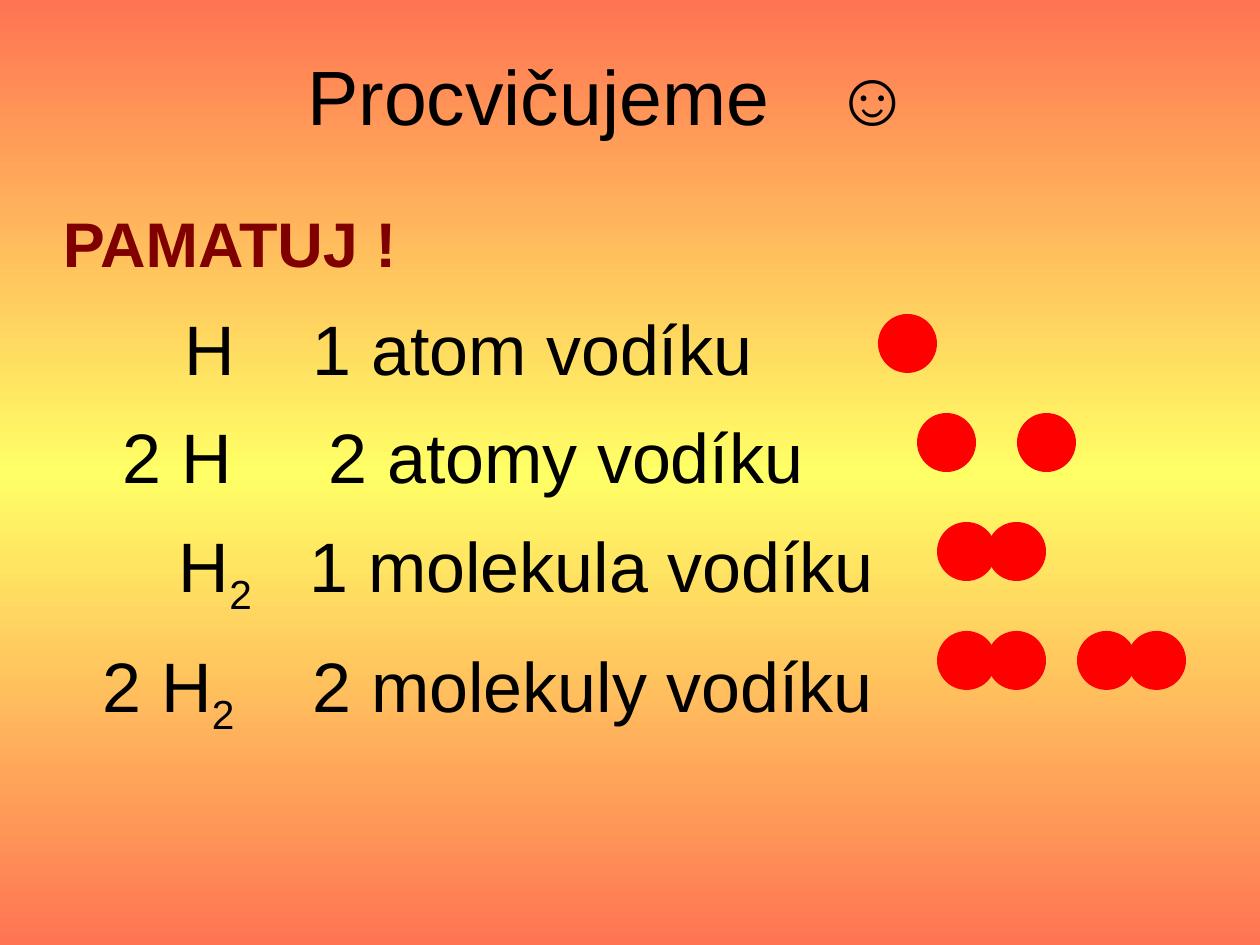
import pptx
import pptx.dml.color
import pptx.enum.shapes
import pptx.enum.text
import pptx.oxml.ns
import pptx.util
import copy
import dataclasses
from lxml import etree

ALIGN = pptx.enum.text.PP_ALIGN
OVAL = pptx.enum.shapes.MSO_SHAPE.OVAL


@dataclasses.dataclass(frozen=True)
class Theme:
    font: str = "Arial"
    ink: str = "000000"
    alert: str = "800000"
    atom: str = "FF0000"
    edge: str = "FF7453"
    glow: str = "FFFF66"
    title: int = 44
    head: int = 36
    body: int = 40


def px(n):
    return pptx.util.Emu(round(n * 914400 / 126))


def rgb(code):
    return pptx.dml.color.RGBColor.from_string(code)


def write(para, text, *, font, size, color, bold=False, base=0, track=0):
    """Add a run; base is the baseline shift in percent, track is in points."""
    run = para.add_run()
    run.text = text
    run.font.name = font
    run.font.size = pptx.util.Pt(size)
    run.font.bold = bold
    run.font.color.rgb = rgb(color)
    props = run.font._element
    if base:
        props.set("baseline", str(base * 1000))
    if track:
        props.set("spc", str(track * 100))


def set_tabs(para, stops):
    qn = pptx.oxml.ns.qn
    tabs = etree.SubElement(para._p.get_or_add_pPr(), qn("a:tabLst"))
    for stop in stops:
        etree.SubElement(tabs, qn("a:tab"), pos=str(px(stop)), algn="l")


class Deck:
    def __init__(self, theme):
        self.theme = theme
        self.file = pptx.Presentation()
        self.file.slide_width = px(1260)
        self.file.slide_height = px(945)
        self.slide = self.file.slides.add_slide(self.file.slide_layouts[5])

    def backdrop(self):
        fill = self.slide.background.fill
        fill.gradient()
        fill.gradient_angle = 270
        first = fill.gradient_stops[0]._gs
        first.addnext(copy.deepcopy(first))
        colors = (self.theme.edge, self.theme.glow, self.theme.edge)
        for i, (stop, color) in enumerate(zip(fill.gradient_stops, colors)):
            stop.position = i / 2
            stop.color.rgb = rgb(color)

    def title(self, text, mark, x, y, w, h):
        shape = self.slide.shapes.title
        shape.left, shape.top, shape.width, shape.height = map(px, (x, y, w, h))
        frame = shape.text_frame
        frame.vertical_anchor = pptx.enum.text.MSO_ANCHOR.MIDDLE
        para = frame.paragraphs[0]
        para.alignment = ALIGN.CENTER
        style = dict(font=self.theme.font, size=self.theme.title,
                     color=self.theme.ink)
        write(para, text, **style)
        write(para, " ", track=24, **style)
        write(para, mark, **style)

    def lesson(self, head, rows, x, y, w, h):
        """Place a heading and tabbed rows of formula and meaning."""
        look = self.theme
        frame = self.slide.shapes.add_textbox(*map(px, (x, y, w, h))).text_frame
        frame.word_wrap = True
        frame.margin_left, frame.margin_top = px(9), px(10)
        write(frame.paragraphs[0], head, font=look.font, size=look.head,
              color=look.alert, bold=True)
        style = dict(font=look.font, size=look.body, color=look.ink)
        for symbol, sub, name, stops in rows:
            para = frame.add_paragraph()
            para.space_before = pptx.util.Pt(14)
            set_tabs(para, stops)
            write(para, "\t" + symbol, **style)
            if sub:
                write(para, sub, base=-25, **style)
            write(para, "\t" + name, **style)

    def atom(self, x, y, home=None):
        shapes = (home or self.slide).shapes
        dot = shapes.add_shape(OVAL, px(x), px(y), px(59), px(59))
        dot.shadow.inherit = False
        dot.fill.solid()
        dot.fill.fore_color.rgb = rgb(self.theme.atom)
        dot.line.fill.background()

    def pair(self, x, y):
        """Draw a molecule of two overlapping atoms."""
        group = self.slide.shapes.add_group_shape()
        for left in (x, x + 50):
            self.atom(left, y, group)


def main():
    deck = Deck(Theme())
    deck.backdrop()
    deck.title("Procvičujeme", "☺", 74, 35, 1071, 120)
    rows = [
        ("H", "", "1 atom vodíku", (122, 250)),
        ("2 H", "", "2 atomy vodíku", (60, 266)),
        ("H", "2", "1 molekula vodíku", (116, 247)),
        ("2 H", "2", "2 molekuly vodíku", (40, 250)),
    ]
    deck.lesson("PAMATUJ !", rows, 54, 195, 1081, 507)
    for x, y in ((878, 314), (917, 413), (1017, 413)):
        deck.atom(x, y)
    for x, y in ((1077, 631), (937, 522), (937, 631)):
        deck.pair(x, y)
    deck.file.save("out.pptx")


if __name__ == "__main__":
    main()
